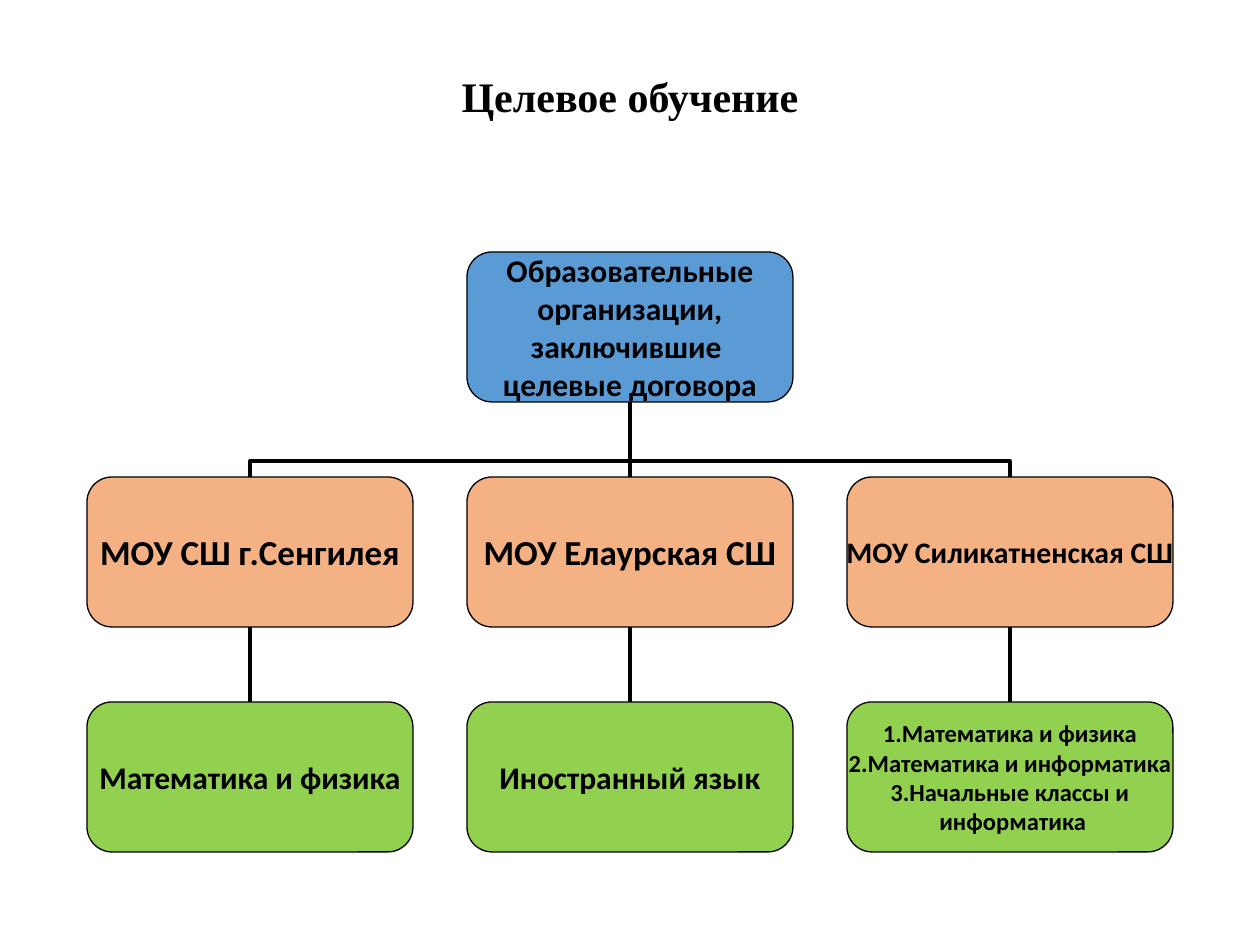
from dataclasses import dataclass
from lxml.etree import SubElement
from pptx import Presentation
from pptx.dml.color import RGBColor
from pptx.enum.shapes import MSO_CONNECTOR as Link, MSO_SHAPE as Shape
from pptx.enum.text import MSO_ANCHOR as Anchor, PP_ALIGN as Align
from pptx.oxml.ns import qn
from pptx.util import Emu, Pt


@dataclass(frozen=True)
class Theme:
    ink = RGBColor(0x00, 0x00, 0x00)
    root = RGBColor(0x5B, 0x9B, 0xD5)
    school = RGBColor(0xF4, 0xB1, 0x83)
    subject = RGBColor(0x92, 0xD0, 0x50)
    title_font = "Times New Roman"
    box_font = "Calibri"
    title_size = 24
    large = 20
    medium = 18
    narrow = 17
    small = 14
    outline = 0.75
    link = 2.25


theme = Theme()
BOX_WIDTH, BOX_HEIGHT = 326, 150
COLUMNS = [87 + 380 * column for column in range(3)]
ROWS = [252 + 225 * row for row in range(3)]
TOP, BOTTOM = 0, 2


def px(length):
    return Emu(round(length * 914400 / 126))


def style_text(para, name, size):
    para.alignment = Align.CENTER
    para.font.name = name
    para.font.size = Pt(size)
    para.font.bold = True
    para.font.color.rgb = theme.ink


deck = Presentation()
deck.slide_width, deck.slide_height = px(1260), px(945)
page = deck.slides.add_slide(deck.slide_layouts[5])

title = page.shapes.title
title.left, title.top, title.width, title.height = px(87), px(36), px(1086), px(126)
title.text_frame.text = "Целевое обучение"
title.text_frame.vertical_anchor = Anchor.MIDDLE
heading = title.text_frame.paragraphs[0]
heading.line_spacing = 0.9
style_text(heading, theme.title_font, theme.title_size)

# Column, row, fill, type size, lines of text
nodes = [
    (1, 0, theme.root, theme.medium,
     ["Образовательные", " организации, ", "заключившие ", "целевые договора"]),
    (0, 1, theme.school, theme.large, ["МОУ СШ г.Сенгилея"]),
    (1, 1, theme.school, theme.large, ["МОУ Елаурская СШ"]),
    (2, 1, theme.school, theme.narrow, ["МОУ Силикатненская СШ"]),
    (0, 2, theme.subject, theme.medium, ["Математика и физика"]),
    (1, 2, theme.subject, theme.medium, ["Иностранный язык"]),
    (2, 2, theme.subject, theme.small,
     ["1.Математика и физика", "2.Математика и информатика",
      "3.Начальные классы и", " информатика"]),
]
boxes = {}
for column, row, fill, size, lines in nodes:
    box = page.shapes.add_shape(Shape.ROUNDED_RECTANGLE, px(COLUMNS[column]),
                                px(ROWS[row]), px(BOX_WIDTH), px(BOX_HEIGHT))
    box.shadow.inherit = False
    box.fill.solid()
    box.fill.fore_color.rgb = fill
    box.line.color.rgb = theme.ink
    box.line.width = Pt(theme.outline)
    frame = box.text_frame
    frame.margin_left = frame.margin_right = frame.margin_top = frame.margin_bottom = 0
    frame.word_wrap = False
    frame.vertical_anchor = Anchor.MIDDLE
    frame.text = "\n".join(lines)
    for para in frame.paragraphs:
        style_text(para, theme.box_font, size)
    boxes[column, row] = box

links = []
straight = [((1, 1), (1, 0))] + [((column, 2), (column, 1)) for column in range(3)]
for lower, upper in straight:
    link = page.shapes.add_connector(Link.STRAIGHT, 0, 0, 0, 0)
    link.begin_connect(boxes[lower], TOP)
    link.end_connect(boxes[upper], BOTTOM)
    links.append(link)

# Elbows rise from the outer schools, so their frames are turned a quarter
rise = ROWS[1] - ROWS[0] - BOX_HEIGHT
reach = COLUMNS[1] - COLUMNS[0]
middle_y = ROWS[1] - rise / 2
for column, degrees, flip in [(0, 270, "0"), (2, 90, "1")]:
    middle_x = (COLUMNS[column] + COLUMNS[1] + BOX_WIDTH) / 2
    left, top = middle_x - rise / 2, middle_y - reach / 2
    link = page.shapes.add_connector(Link.ELBOW, px(left), px(top),
                                     px(left + rise), px(top + reach))
    properties = link._element.spPr
    frame = properties.find(qn("a:xfrm"))
    frame.set("rot", str(degrees * 60000))
    frame.set("flipH", flip)
    adjustments = properties.find(qn("a:prstGeom")).find(qn("a:avLst"))
    SubElement(adjustments, qn("a:gd"), name="adj1", fmla="val 21000")
    links.append(link)

for link in links:
    link.line.color.rgb = theme.ink
    link.line.width = Pt(theme.link)
    SubElement(link._element.spPr, qn("a:effectLst"))

deck.save("out.pptx")
